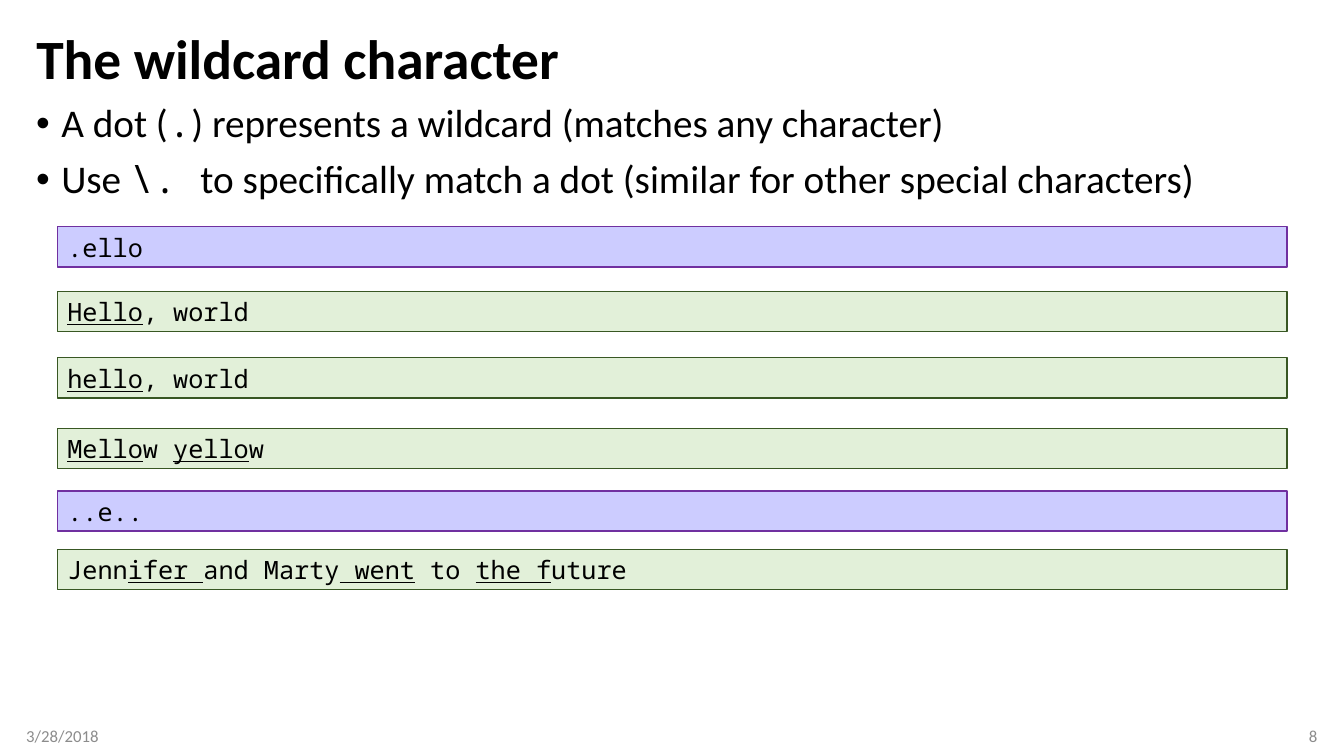
"""Build the slide that explains the wildcard character in regular expressions."""
import dataclasses

import pptx
import pptx.dml.color
import pptx.enum.text
import pptx.enum.shapes
import pptx.oxml
import pptx.oxml.ns
import pptx.util

Pt = pptx.util.Pt
RGB = pptx.dml.color.RGBColor.from_string
ALIGN = pptx.enum.text.PP_ALIGN
ANCHOR = pptx.enum.text.MSO_ANCHOR


@dataclasses.dataclass(frozen=True)
class Theme:
    sans: str = "Calibri"
    mono: str = "Noto Sans Mono"
    ink: str = "000000"
    muted: str = "8C8C8C"
    pattern: tuple = ("CCCCFF", "7030A0")
    sample: tuple = ("E2F0D9", "385723")
    title: float = 39.6
    body: float = 28
    code: float = 18
    footer: float = 12


theme = Theme()


def add_run(p, text, size, font=theme.sans, color=theme.ink):
    r = p.add_run()
    r.text = text
    r.font.size = Pt(size)
    r.font.name = font
    r.font.color.rgb = RGB(color)
    return r


def set_frame(sp, left=7.2, right=7.2, anchor=ANCHOR.MIDDLE):
    tf = sp.text_frame
    tf.word_wrap = True
    tf.auto_size = pptx.enum.text.MSO_AUTO_SIZE.NONE
    tf.vertical_anchor = anchor
    tf.margin_left, tf.margin_right = Pt(left), Pt(right)
    tf.margin_top = tf.margin_bottom = Pt(3.6)
    return tf


prs = pptx.Presentation()
prs.slide_width, prs.slide_height = Pt(960), Pt(540)
slide = prs.slides.add_slide(prs.slide_layouts[5])
shapes = slide.shapes

margin, content_width = 18.72, 922.32

sp = shapes.title
sp.left, sp.top, sp.width, sp.height = Pt(margin), Pt(18), Pt(content_width), Pt(51.84)
p = set_frame(sp).paragraphs[0]
p.alignment = ALIGN.LEFT
p.line_spacing = 0.9
add_run(p, "The wildcard character", theme.title).font.bold = True

bullets = [
    ("A dot (", ".", ") represents a wildcard (matches any character)"),
    ("Use ", "\\. ", "to specifically match a dot (similar for other special characters)"),
]
sp = shapes.add_textbox(Pt(margin), Pt(70.56), Pt(content_width), Pt(26.64))
tf = set_frame(sp, anchor=ANCHOR.TOP)
for i, parts in enumerate(bullets):
    p = tf.add_paragraph() if i else tf.paragraphs[0]
    p.line_spacing = 0.9
    p.space_before = Pt(10)
    pPr = p._p.get_or_add_pPr()
    pPr.set("marL", str(Pt(18)))
    pPr.set("indent", str(-Pt(18)))
    ns = pptx.oxml.ns.nsdecls("a")
    pPr.append(pptx.oxml.parse_xml(f'<a:buFont {ns} typeface="Arial"/>'))
    pPr.append(pptx.oxml.parse_xml(f'<a:buChar {ns} char="•"/>'))
    for text, font in zip(parts, (theme.sans, theme.mono, theme.sans)):
        add_run(p, text, theme.body, font)

footers = [
    (margin, "3/28/2018", ALIGN.LEFT, 0, 7.2),
    (margin + content_width - 216, "8", ALIGN.RIGHT, 7.2, 0),
]
for left, text, align, inset_left, inset_right in footers:
    sp = shapes.add_textbox(Pt(left), Pt(511.2), Pt(216), Pt(28.8))
    p = set_frame(sp, inset_left, inset_right).paragraphs[0]
    p.alignment = align
    add_run(p, text, theme.footer, color=theme.muted)

# Matched text stands between underscores.
boxes = [
    (162, theme.pattern, ".ello"),
    (208.08, theme.sample, "_Hello_, world"),
    (255.6, theme.sample, "_hello_, world"),
    (306, theme.sample, "_Mello_w _yello_w"),
    (350.64, theme.pattern, "..e.."),
    (392.4, theme.sample, "Jenn_ifer _and Marty_ went_ to _the f_uture"),
]
for top, (fill, line), text in boxes:
    sp = shapes.add_shape(pptx.enum.shapes.MSO_SHAPE.RECTANGLE,
                          Pt(41.04), Pt(top), Pt(878.4), Pt(28.8))
    sp.shadow.inherit = False
    sp.fill.solid()
    sp.fill.fore_color.rgb = RGB(fill)
    sp.line.color.rgb = RGB(line)
    sp.line.width = Pt(1)
    p = set_frame(sp).paragraphs[0]
    p.alignment = ALIGN.LEFT
    for i, part in enumerate(text.split("_")):
        if part:
            add_run(p, part, theme.code, theme.mono).font.underline = i % 2 == 1

prs.save("out.pptx")
